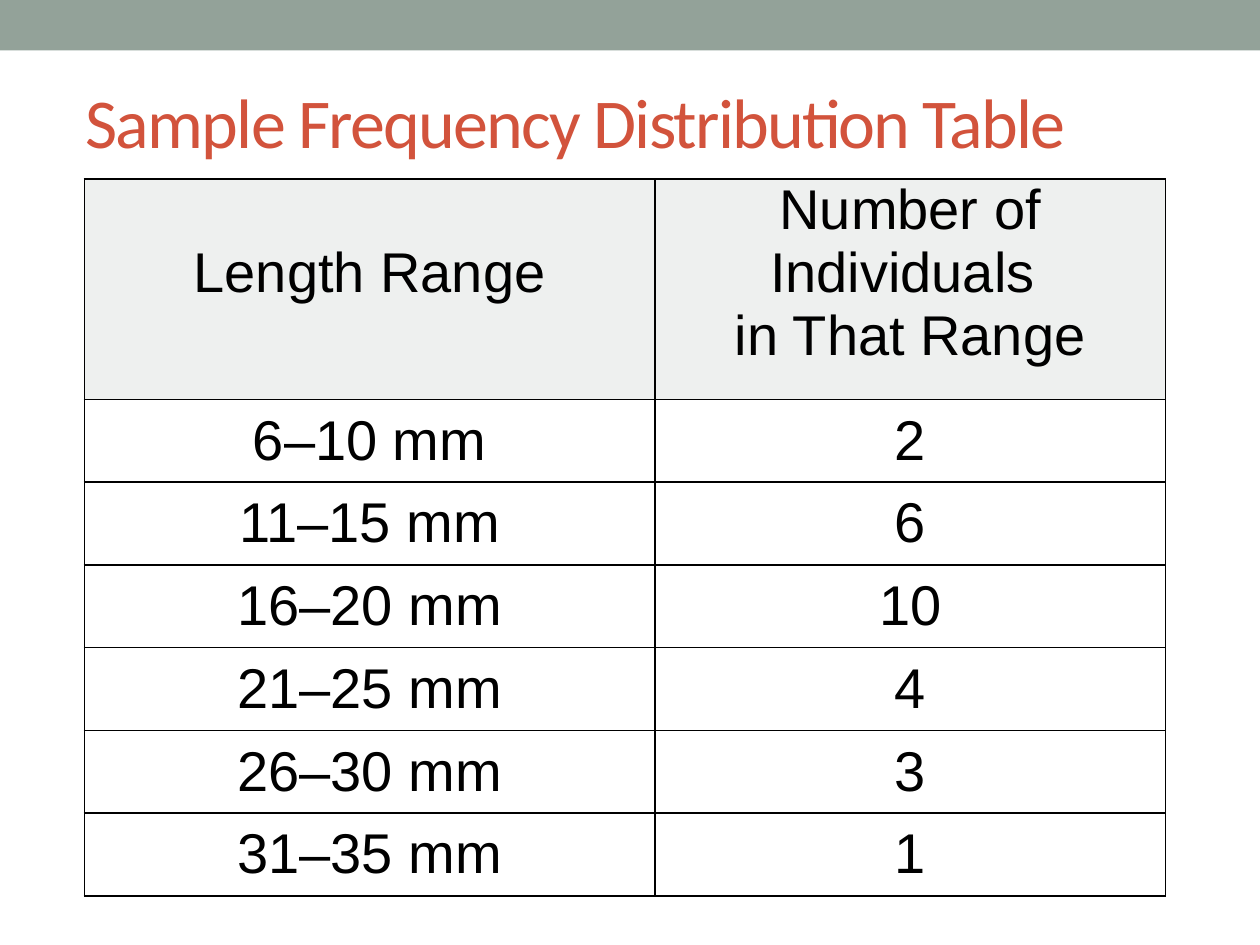
from dataclasses import dataclass

from lxml.etree import SubElement
from pptx import Presentation
from pptx.dml.color import RGBColor
from pptx.enum.shapes import MSO_SHAPE as Shape
from pptx.enum.text import MSO_ANCHOR as Anchor, PP_ALIGN as Align
from pptx.oxml.ns import qn
from pptx.util import Pt

COLOURS = {
    "band": "93A299",
    "title": "D2533C",
    "header": "EEF0EF",
    "body": "FFFFFF",
    "ink": "000000",
}
COLUMN_WIDTHS = (326.2, 291.6)
HEADER_HEIGHT = 126
ROW_HEIGHT = 47.3
CELL_INSET = 5.2
BORDER_WIDTH = 1
FREQUENCIES = (2, 6, 10, 4, 3, 1)
FIRST_LENGTH, CLASS_WIDTH = 6, 5


@dataclass
class CellStyle:
    fill: str
    anchor: Anchor
    margin_top: float = 0


HEADER_LEFT = CellStyle("header", Anchor.TOP, 36)
HEADER_RIGHT = CellStyle("header", Anchor.TOP)
BODY = CellStyle("body", Anchor.MIDDLE)


def colour(name: str) -> RGBColor:
    return RGBColor.from_string(COLOURS[name])


def format_font(font, name: str, size: float, ink: str) -> None:
    for attribute, value in {"name": name, "size": Pt(size)}.items():
        setattr(font, attribute, value)
    font.color.rgb = colour(ink)


def add_borders(cell) -> None:
    """Draw all four cell edges; must run before the cell gets its fill."""
    properties = cell._tc.get_or_add_tcPr()
    for edge in ("a:lnL", "a:lnR", "a:lnT", "a:lnB"):
        line = SubElement(properties, qn(edge), w=str(Pt(BORDER_WIDTH)))
        fill = SubElement(line, qn("a:solidFill"))
        SubElement(fill, qn("a:srgbClr"), val=COLOURS["ink"])


def fill_cell(cell, text: str, style: CellStyle) -> None:
    add_borders(cell)
    cell.fill.solid()
    cell.fill.fore_color.rgb = colour(style.fill)
    settings = {
        "margin_left": Pt(CELL_INSET),
        "margin_right": Pt(CELL_INSET),
        "margin_top": Pt(style.margin_top),
        "margin_bottom": Pt(0),
        "vertical_anchor": style.anchor,
    }
    for attribute, value in settings.items():
        setattr(cell, attribute, value)
    paragraph = cell.text_frame.paragraphs[0]
    paragraph.text = text
    paragraph.alignment = Align.CENTER
    for run in paragraph.runs:
        format_font(run.font, "Arial", 32, "ink")


def add_band(slide) -> None:
    band = slide.shapes.add_shape(Shape.RECTANGLE, 0, 0, Pt(720), Pt(28.8))
    band.shadow.inherit = False
    band.fill.solid()
    band.fill.fore_color.rgb = colour("band")
    band.line.fill.background()


def add_title(slide, text: str) -> None:
    box = slide.shapes.add_textbox(Pt(41.8), Pt(36), Pt(642.2), Pt(66.2))
    frame = box.text_frame
    frame.word_wrap = True
    frame.vertical_anchor = Anchor.MIDDLE
    run = frame.paragraphs[0].add_run()
    run.text = text
    format_font(run.font, "Calibri", 40, "title")
    run.font._element.set("spc", "-100")


def add_frequency_table(slide) -> None:
    rows = [(("Length Range", HEADER_LEFT),
             ("Number of Individuals \vin That Range", HEADER_RIGHT))]
    for index, count in enumerate(FREQUENCIES):
        low = FIRST_LENGTH + index * CLASS_WIDTH
        rows.append(((f"{low}–{low + CLASS_WIDTH - 1} mm", BODY),
                     (str(count), BODY)))
    heights = [HEADER_HEIGHT] + [ROW_HEIGHT] * len(FREQUENCIES)
    table = slide.shapes.add_table(
        len(rows), len(COLUMN_WIDTHS), Pt(48.2), Pt(102.2),
        Pt(sum(COLUMN_WIDTHS)), Pt(sum(heights))).table
    for column, width in zip(table.columns, COLUMN_WIDTHS):
        column.width = Pt(width)
    for row, height, entries in zip(table.rows, heights, rows):
        row.height = Pt(height)
        for cell, (text, style) in zip(row.cells, entries):
            fill_cell(cell, text, style)


def main() -> None:
    presentation = Presentation()
    presentation.slide_width, presentation.slide_height = Pt(720), Pt(540)
    slide = presentation.slides.add_slide(presentation.slide_layouts[6])
    add_band(slide)
    add_frequency_table(slide)
    add_title(slide, "Sample Frequency Distribution Table")
    presentation.save("out.pptx")


if __name__ == "__main__":
    main()
